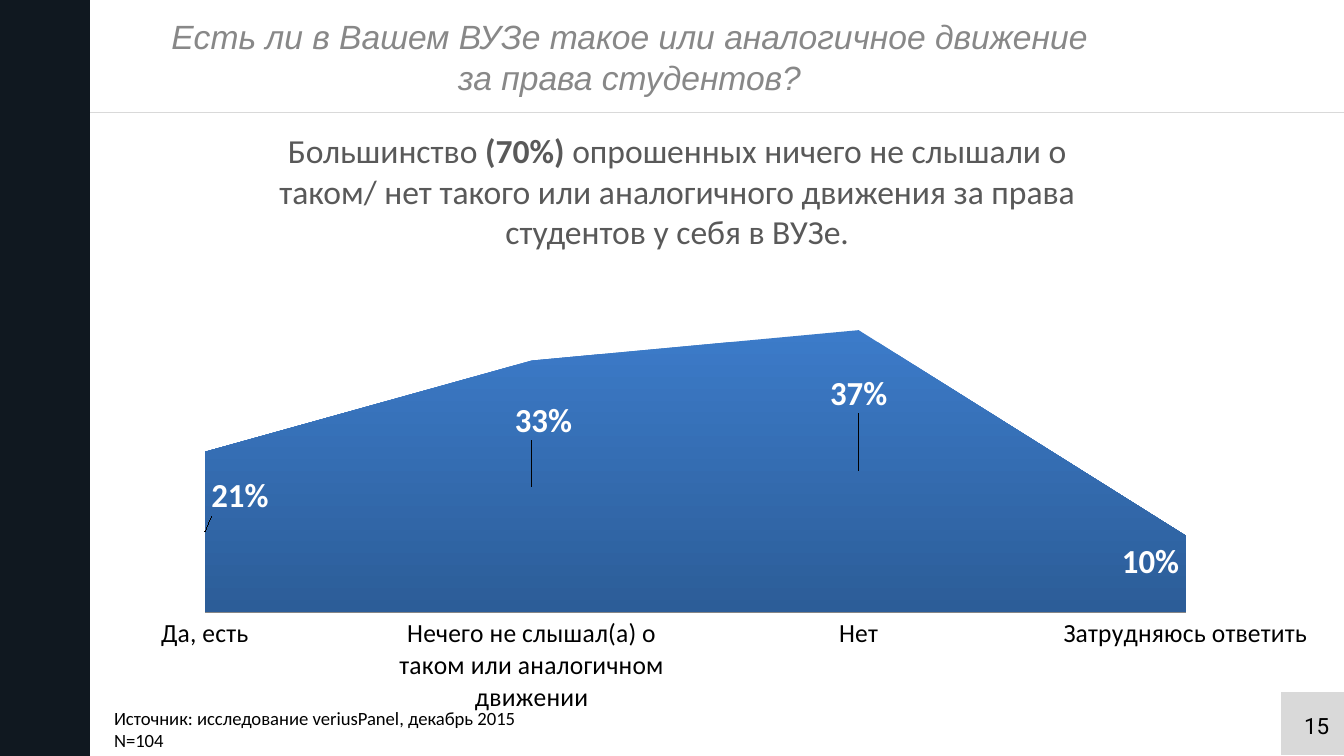
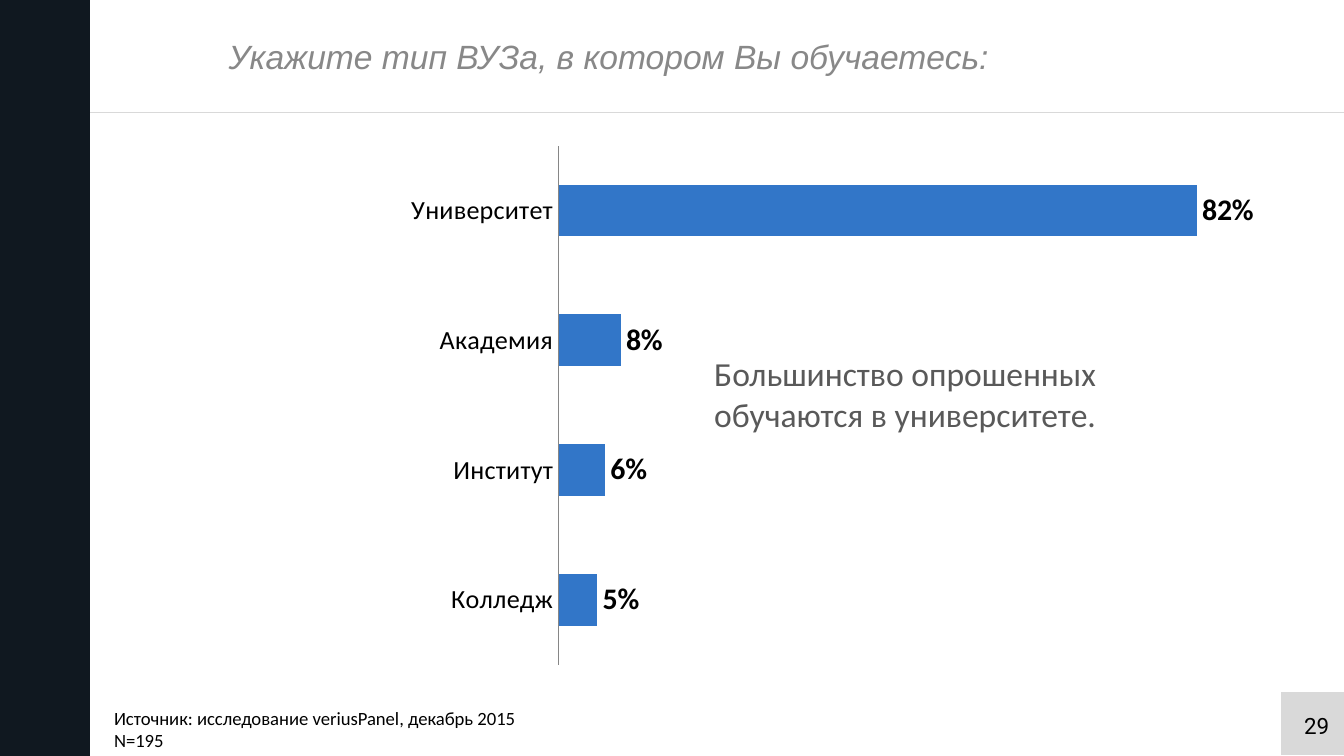
import pptx
import pptx.chart.data
import pptx.dml.color
import pptx.enum.chart
import pptx.enum.shapes
import pptx.enum.text
import pptx.oxml
import pptx.oxml.ns
import pptx.util
from pptx.util import Inches, Pt

COLORS = {"band": "101820", "rule": "D9D9D9", "title": "888888", "body": "595959",
          "text": "000000", "white": "FFFFFF", "axis": "868686", "bar": "3276C8",
          "area_top": "3C7BC9", "area_bottom": "2C5D98"}
RGB = {name: pptx.dml.color.RGBColor.from_string(c) for name, c in COLORS.items()}
ALIGN = pptx.enum.text.PP_ALIGN
ANCHOR = pptx.enum.text.MSO_ANCHOR
SHAPE = pptx.enum.shapes.MSO_SHAPE
CHART = pptx.enum.chart
NS_C = pptx.oxml.ns.nsdecls("c")
PERCENT = "####%"


def write(tf, text, size=18, font="Calibri", color="body", italic=None,
          align=ALIGN.LEFT, anchor=ANCHOR.TOP):
    """Fill a text frame: newlines split paragraphs, ** encloses bold words."""
    tf.word_wrap = True
    tf.auto_size = pptx.enum.text.MSO_AUTO_SIZE.NONE
    tf.vertical_anchor = anchor
    for i, line in enumerate(text.split("\n")):
        p = tf.add_paragraph() if i else tf.paragraphs[0]
        p.alignment = align
        for j, part in enumerate(line.split("**")):
            r = p.add_run()
            r.text = part
            r.font.size, r.font.name = Pt(size), font
            r.font.bold, r.font.italic = j % 2 == 1, italic
            r.font.color.rgb = RGB[color]


def add_chart(slide, kind, box, plot, values, top, size):
    """Add a one-series chart; plot is the inner plot area in chart fractions."""
    data = pptx.chart.data.CategoryChartData(number_format=PERCENT)
    data.categories = list(values)
    data.add_series("Series 1", list(values.values()))
    chart = slide.shapes.add_chart(kind, *map(Inches, box), data).chart
    chart.has_legend = chart.has_title = False
    chart.font.size, chart.font.name = Pt(size), "Calibri"
    chart.font.color.rgb = RGB["text"]

    value_axis, category_axis = chart.value_axis, chart.category_axis
    value_axis.minimum_scale, value_axis.maximum_scale = 0, top
    value_axis.has_major_gridlines = value_axis.visible = False
    category_axis.has_major_gridlines = False
    category_axis.major_tick_mark = CHART.XL_TICK_MARK.NONE
    category_axis.tick_labels.font.size = Pt(14)
    category_axis.format.line.color.rgb = RGB["axis"]
    category_axis.format.line.width = Pt(1)

    labels = chart.plots[0].series[0].data_labels
    labels.show_value = True
    labels.number_format, labels.number_format_is_linked = PERCENT, False
    labels.font.bold, labels.font.size = True, Pt(size)

    area = chart._chartSpace.chart.plotArea
    for old in area.findall(pptx.oxml.ns.qn("c:layout")):
        area.remove(old)
    sizes = "".join(f'<c:{k} val="{v}"/>' for k, v in zip("xywh", plot))
    area.insert(0, pptx.oxml.parse_xml(
        f'<c:layout {NS_C}><c:manualLayout><c:layoutTarget val="inner"/>'
        f'<c:xMode val="edge"/><c:yMode val="edge"/>{sizes}</c:manualLayout></c:layout>'))
    return chart


prs = pptx.Presentation()
prs.slide_width = Inches(10)
prs.slide_height = prs.slide_width * 9 // 16
HEIGHT = prs.slide_height / Inches(1)

pages = [
    {"number": 15, "n": 104, "title_box": (1.14, 0, 7.09, 0.84),
     "title": "Есть ли в Вашем ВУЗе такое или аналогичное движение за права студентов?",
     "chart": (CHART.XL_CHART_TYPE.AREA, (0.83, 1, 8.9, 4.44), (0.08, 0.29, 0.84, 0.51),
               {"Да, есть": 0.21,
                "Нечего не слышал(а) о таком или аналогичном движении": 0.33,
                "Нет": 0.37, "Затрудняюсь ответить": 0.1}, 0.4, 18),
     "note_box": (1.85, 0.92, 6.38, 1.01),
     "note": "Большинство **(70%)** опрошенных ничего не слышали о таком/ нет такого "
             "или аналогичного движения за права студентов у себя в ВУЗе."},
    {"number": 29, "n": 195, "title_box": (0.83, 0, 7.4, 0.84),
     "title": "Укажите тип ВУЗа, в котором Вы обучаетесь:",
     "chart": (CHART.XL_CHART_TYPE.BAR_CLUSTERED, (-2.48, 0.77, 11.85, 4.49),
               (0.56, 0.07, 0.44, 0.86),
               {"Колледж": 0.05, "Институт": 0.06, "Академия": 0.08,
                "Университет": 0.82}, 0.9, 16),
     "note_box": (5.08, 2.58, 3.31, 0.71),
     "note": "Большинство опрошенных обучаются в университете."},
]

charts = []
for page in pages:
    slide = prs.slides.add_slide(prs.slide_layouts[5])

    # Side band, page number tile and rule under the title
    for shape, box, color in (
            (SHAPE.RECTANGLE, (0, 0, 0.67, HEIGHT), "band"),
            (SHAPE.FLOWCHART_PROCESS, (9.53, 5.15, 0.47, 0.47), "rule")):
        sp = slide.shapes.add_shape(shape, *map(Inches, box))
        sp.shadow.inherit = False
        sp.fill.solid()
        sp.fill.fore_color.rgb = RGB[color]
        sp.line.fill.background()
    rule = slide.shapes.add_connector(pptx.enum.shapes.MSO_CONNECTOR.STRAIGHT,
                                      Inches(0.67), Inches(0.84), Inches(10), Inches(0.84))
    rule.line.color.rgb, rule.line.width = RGB["rule"], Pt(0.5)
    rule._element.spPr.append(pptx.oxml.parse_xml(
        f'<a:effectLst {pptx.oxml.ns.nsdecls("a")}/>'))

    title = slide.shapes.title
    title.left, title.top, title.width, title.height = map(Inches, page["title_box"])
    write(title.text_frame, page["title"], font="Arial", color="title", italic=True,
          align=ALIGN.CENTER, anchor=ANCHOR.MIDDLE)

    charts.append(add_chart(slide, *page["chart"]))

    source = f"Источник: исследование veriusPanel, декабрь 2015\nN={page['n']}"
    for box, text, style in (
            ((9.53, 5.25, 0.46, 0.42), str(page["number"]),
             {"size": 12, "font": "Roboto", "color": "text", "align": ALIGN.RIGHT}),
            ((0.75, 5.21, 8.82, 0.44), source, {"size": 10, "color": "text"}),
            (page["note_box"], page["note"], {"align": ALIGN.CENTER})):
        write(slide.shapes.add_textbox(*map(Inches, box)).text_frame, text, **style)

area_chart, bar_chart = charts

# Area: vertical gradient, white labels shifted inside, no leader lines
series = area_chart.plots[0].series[0]
fill = series.format.fill
fill.gradient()
fill.gradient_angle = 270
for stop, color in zip(fill.gradient_stops, ("area_top", "area_bottom")):
    stop.color.rgb = RGB[color]
labels = series.data_labels
labels.font.color.rgb = RGB["white"]
for i in range(4):
    font = series.points[i].data_label.font
    font.bold, font.size = True, Pt(18)
    font.color.rgb = RGB["white"]
offsets = [(0.03, -0.06), (0.01, -0.11), (0, -0.13), (-0.03, -0.02)]
for dLbl, (dx, dy) in zip(labels._element.findall(pptx.oxml.ns.qn("c:dLbl")), offsets):
    dLbl.insert(1, pptx.oxml.parse_xml(
        f'<c:layout {NS_C}><c:manualLayout><c:x val="{dx}"/><c:y val="{dy}"/>'
        '</c:manualLayout></c:layout>'))
    for position in dLbl.findall(pptx.oxml.ns.qn("c:dLblPos")):
        dLbl.remove(position)
labels._element.append(pptx.oxml.parse_xml(
    f'<c:extLst {NS_C}><c:ext uri="{{CE6537A1-D6FC-4f65-9D91-7224C49458BB}}" '
    'xmlns:c15="http://schemas.microsoft.com/office/drawing/2012/chart">'
    '<c15:showLeaderLines val="0"/></c:ext></c:extLst>'))

# Bars: solid fill, labels past the bar ends
plot = bar_chart.plots[0]
plot.gap_width, plot.overlap, plot.vary_by_categories = 150, -25, False
plot.series[0].format.fill.solid()
plot.series[0].format.fill.fore_color.rgb = RGB["bar"]
plot.series[0].data_labels.position = CHART.XL_LABEL_POSITION.OUTSIDE_END

prs.save("out.pptx")
